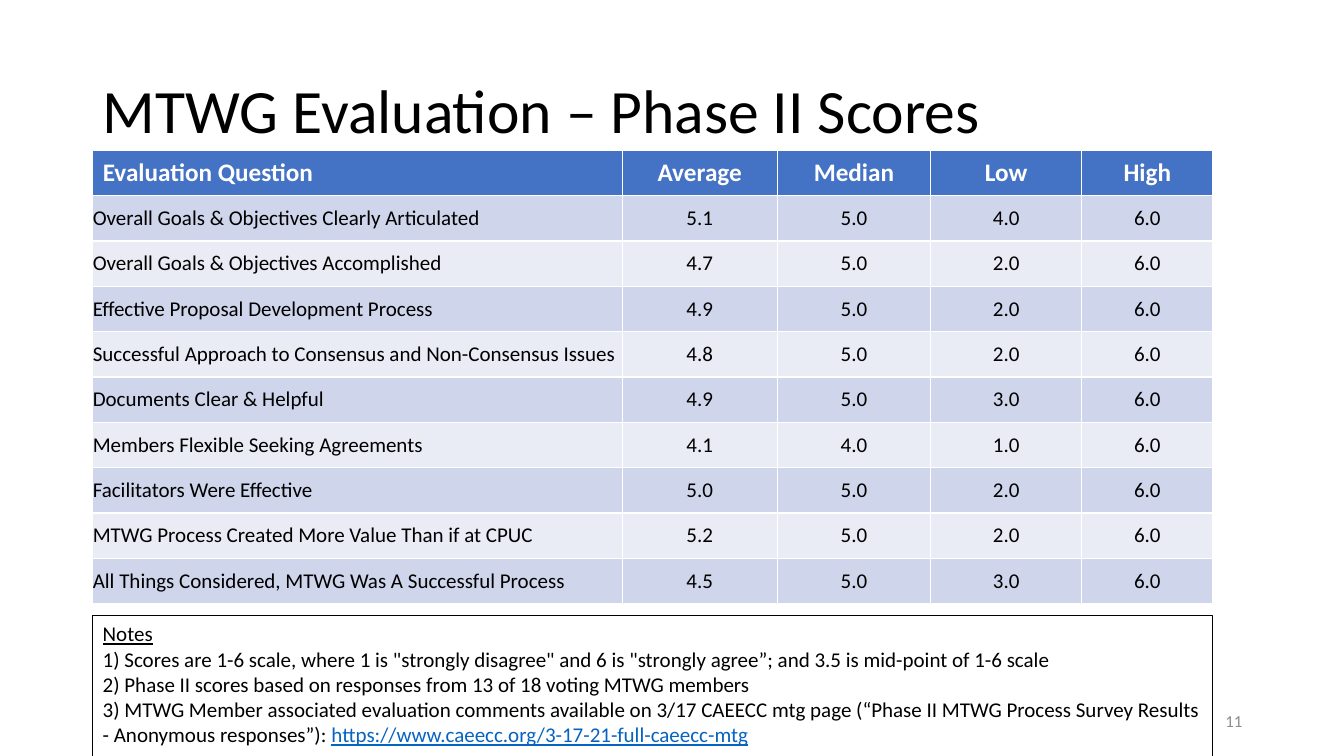
import pptx
import pptx.util
import pptx.dml.color
import pptx.enum.shapes
import pptx.enum.text

Inches = pptx.util.Inches
RGBColor = pptx.dml.color.RGBColor
ALIGN = pptx.enum.text.PP_ALIGN
MIDDLE = pptx.enum.text.MSO_ANCHOR.MIDDLE

BLACK = RGBColor(0x00, 0x00, 0x00)
WHITE = RGBColor(0xFF, 0xFF, 0xFF)
GRAY = RGBColor(0x8C, 0x8C, 0x8C)
HEADER_BLUE = RGBColor(0x44, 0x72, 0xC4)
BAND_DARK = RGBColor(0xCF, 0xD5, 0xEA)
BAND_LIGHT = RGBColor(0xE9, 0xEB, 0xF5)
LINK_BLUE = RGBColor(0x05, 0x63, 0xC1)

HEADERS = ["Evaluation Question", "Average", "Median", "Low", "High"]
COLUMN_WIDTHS = [5.25, 1.54, 1.52, 1.5, 1.3]
SCORES = [
    ("Overall Goals & Objectives Clearly Articulated", 5.1, 5, 4, 6),
    ("Overall Goals & Objectives Accomplished", 4.7, 5, 2, 6),
    ("Effective Proposal Development Process", 4.9, 5, 2, 6),
    ("Successful Approach to Consensus and Non-Consensus Issues", 4.8, 5, 2, 6),
    ("Documents Clear & Helpful", 4.9, 5, 3, 6),
    ("Members Flexible Seeking Agreements", 4.1, 4, 1, 6),
    ("Facilitators Were Effective", 5.0, 5, 2, 6),
    ("MTWG Process Created More Value Than if at CPUC", 5.2, 5, 2, 6),
    ("All Things Considered, MTWG Was A Successful Process", 4.5, 5, 3, 6),
]
NOTES = [
    [("Notes", BLACK, True)],
    [('1) Scores are 1-6 scale, where 1 is "strongly disagree" and 6 is '
      '"strongly agree”; and 3.5 is mid-point of 1-6 scale', BLACK, False)],
    [("2) Phase II scores based on responses from 13 of 18 voting MTWG members",
      BLACK, False)],
    [("3) MTWG Member associated evaluation comments available on 3/17 CAEECC "
      "mtg page (“Phase II MTWG Process Survey Results - Anonymous responses”): ",
      BLACK, False),
     ("https://www.caeecc.org/3-17-21-full-caeecc-mtg", LINK_BLUE, True)],
]


def add_run(p, text, size, color, bold=False, underline=False):
    """Append one formatted run to a paragraph."""
    r = p.add_run()
    r.text = text
    r.font.name = "Calibri"
    r.font.size = pptx.util.Pt(size)
    r.font.color.rgb = color
    r.font.bold = bold
    r.font.underline = underline


def add_title(s, left, top, width, height):
    """Place and format the title placeholder."""
    sp = s.shapes.title
    sp.left, sp.top = Inches(left), Inches(top)
    sp.width, sp.height = Inches(width), Inches(height)
    sp.text_frame.vertical_anchor = MIDDLE
    p = sp.text_frame.paragraphs[0]
    p.alignment = ALIGN.LEFT
    p.line_spacing = 0.9
    add_run(p, "MTWG Evaluation – Phase II Scores", 44, BLACK)


def fill_cell(cell, text, row, column):
    """Write and format one table cell by its row and column."""
    header = row == 0
    cell.vertical_anchor = MIDDLE
    cell.fill.solid()
    band = BAND_DARK if row % 2 else BAND_LIGHT
    cell.fill.fore_color.rgb = HEADER_BLUE if header else band
    if column == 0 and not header:
        cell.margin_left = cell.margin_right = 0
        cell.margin_top = cell.margin_bottom = 0
    p = cell.text_frame.paragraphs[0]
    p.alignment = ALIGN.CENTER if column else ALIGN.LEFT
    add_run(p, text, 18 if header else 15, WHITE if header else BLACK, bold=header)


def add_score_table(s, left, top, width, height):
    """Add the table of evaluation scores."""
    rows = [HEADERS] + [[q] + [f"{v:.1f}" for v in values] for q, *values in SCORES]
    table = s.shapes.add_table(len(rows), len(HEADERS), Inches(left), Inches(top),
                               Inches(width), Inches(height)).table
    for column, column_width in zip(table.columns, COLUMN_WIDTHS):
        column.width = Inches(column_width)
    for i, row in enumerate(rows):
        for j, text in enumerate(row):
            fill_cell(table.cell(i, j), text, i, j)


def add_page_number(s, left, top, width, height):
    """Add the page number at the right of its box."""
    sp = s.shapes.add_textbox(Inches(left), Inches(top), Inches(width), Inches(height))
    tf = sp.text_frame
    tf.word_wrap = True
    tf.vertical_anchor = MIDDLE
    p = tf.paragraphs[0]
    p.alignment = ALIGN.RIGHT
    add_run(p, "11", 12, GRAY)


def add_notes_box(s, left, top, width, height):
    """Add the outlined box of notes below the table."""
    sp = s.shapes.add_shape(pptx.enum.shapes.MSO_SHAPE.RECTANGLE, Inches(left),
                            Inches(top), Inches(width), Inches(height))
    sp.shadow.inherit = False
    sp.fill.background()
    sp.line.color.rgb = BLACK
    sp.line.width = pptx.util.Pt(0.75)
    tf = sp.text_frame
    tf.word_wrap = True
    tf.vertical_anchor = pptx.enum.text.MSO_ANCHOR.TOP
    tf.auto_size = pptx.enum.text.MSO_AUTO_SIZE.SHAPE_TO_FIT_TEXT
    for i, note in enumerate(NOTES):
        p = tf.add_paragraph() if i else tf.paragraphs[0]
        p.alignment = ALIGN.LEFT
        for text, color, underline in note:
            add_run(p, text, 15, color, underline=underline)


def main():
    """Build and save the slide."""
    prs = pptx.Presentation()
    prs.slide_width, prs.slide_height = Inches(13.33), Inches(7.5)
    s = prs.slides.add_slide(prs.slide_layouts.get_by_name("Title Only"))
    left, width = 0.92, sum(COLUMN_WIDTHS)
    add_title(s, left, 0.4, 11.5, 1.45)
    add_score_table(s, left, 1.49, width, 4.5)
    add_page_number(s, 9.42, 6.95, 3, 0.4)
    add_notes_box(s, left, 6.11, width, 1.41)
    prs.save("out.pptx")


if __name__ == "__main__":
    main()
